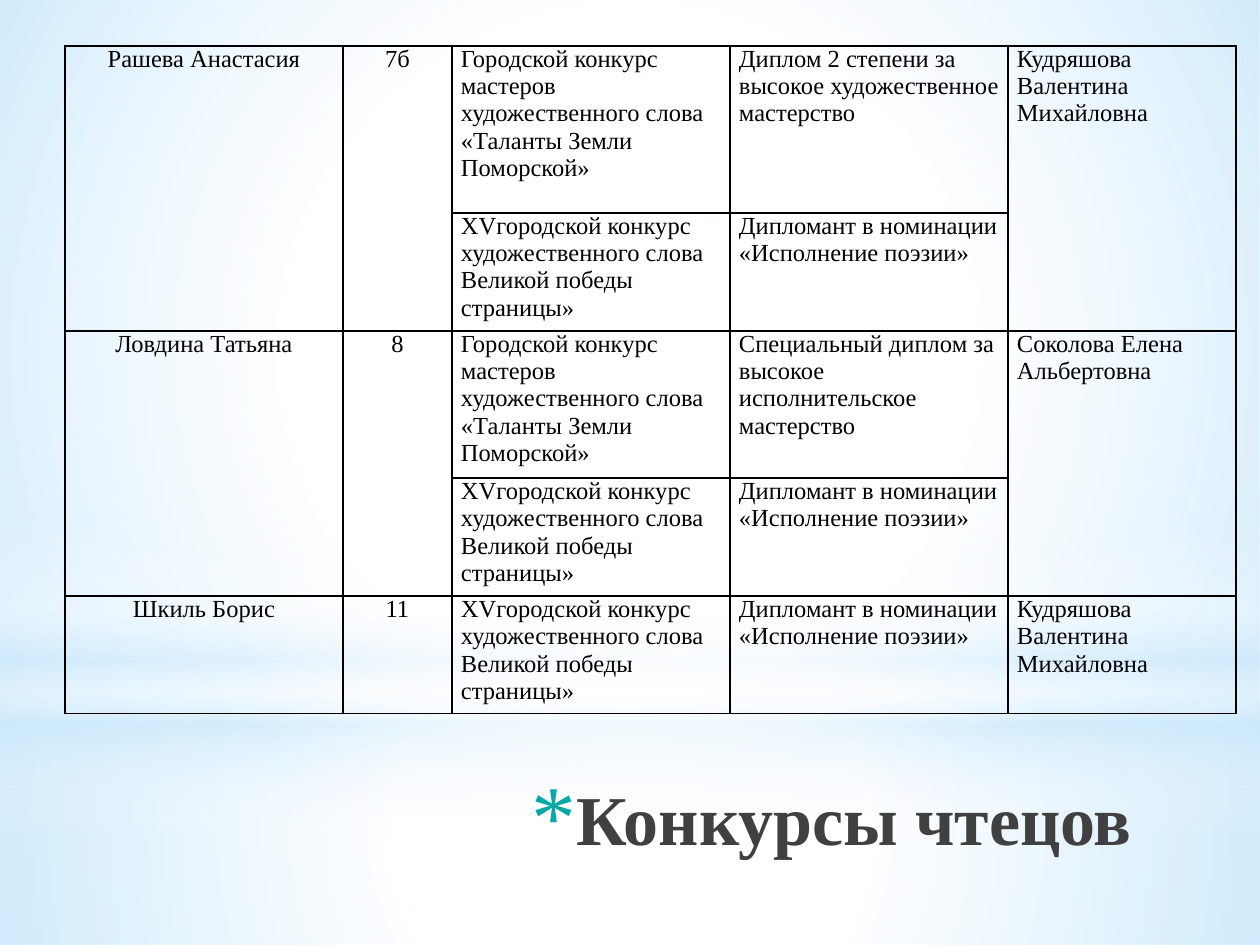
import pptx
import pptx.dml.color
import pptx.enum.shapes
import pptx.enum.text
import pptx.oxml
import pptx.oxml.ns
import pptx.util

PX = 914400 / 126
BLACK = pptx.dml.color.RGBColor(0x00, 0x00, 0x00)
WHITE = pptx.dml.color.RGBColor(0xFF, 0xFF, 0xFF)
SKY = pptx.dml.color.RGBColor(0xC6, 0xE7, 0xFC)
TEAL = pptx.dml.color.RGBColor(0x04, 0xA8, 0xA4)
DARK_GRAY = pptx.dml.color.RGBColor(0x40, 0x40, 0x40)
FONT = "Times New Roman"
NAMESPACE = pptx.oxml.ns.nsdecls("a")
CENTER = pptx.enum.text.PP_ALIGN.CENTER
LEFT = pptx.enum.text.PP_ALIGN.LEFT

RECTANGLE = pptx.enum.shapes.MSO_SHAPE.RECTANGLE
OVAL = pptx.enum.shapes.MSO_SHAPE.OVAL
RADIAL = ('<a:path path="circle"><a:fillToRect l="50000" t="50000" '
          'r="50000" b="50000"/></a:path>')
VERTICAL = '<a:lin ang="5400000" scaled="0"/>'
BACKDROP = [
    (RECTANGLE, (0, 703, 1260, 242), RADIAL,
     [(0, WHITE, 91), (37, WHITE, 76), (100, SKY, 79)]),
    (RECTANGLE, (0, 0, 1260, 703), RADIAL,
     [(0, WHITE, 89), (48, WHITE, 62), (100, SKY, 79)]),
    (RECTANGLE, (0, 519, 1260, 315), VERTICAL,
     [(0, WHITE, 0), (29, WHITE, 30), (45, SKY, 40),
      (55, WHITE, 26), (65, SKY, 60), (100, WHITE, 0)]),
    (OVAL, (0, 220, 1260, 703), RADIAL, [(0, WHITE, 100), (56, WHITE, 0)]),
]

COLUMN_WIDTHS = [278, 109, 278, 278, 228]
ROW_HEIGHTS = [167, 118, 147, 118, 117]
TALENTS = "Городской конкурс мастеров художественного слова «Таланты Земли Поморской»"
VICTORY = "XVгородской конкурс художественного слова Великой победы страницы»"
POETRY = "Дипломант в номинации «Исполнение поэзии»"
KUDRYASHOVA = "Кудряшова Валентина Михайловна"
READERS = [
    ("Рашева Анастасия", "7б", KUDRYASHOVA,
     [(TALENTS, "Диплом 2 степени за высокое художественное мастерство"),
      (VICTORY, POETRY)]),
    ("Ловдина Татьяна", "8", "Соколова Елена Альбертовна",
     [(TALENTS, "Специальный диплом за высокое исполнительское мастерство"),
      (VICTORY, POETRY)]),
    ("Шкиль Борис", "11", KUDRYASHOVA, [(VICTORY, POETRY)]),
]


def px(length):
    """Turn pixels into EMU."""
    return pptx.util.Emu(round(length * PX))


def format_paragraph(paragraph, size, color, alignment, bold=False):
    """Set the alignment and font of a paragraph's runs."""
    paragraph.alignment = alignment
    for run in paragraph.runs:
        run.font.name = FONT
        run.font.size = pptx.util.Pt(size)
        run.font.bold = bold
        run.font.color.rgb = color


def add_gradient_shape(slide, kind, box, direction, stops):
    """Add a borderless shape filled with a translucent gradient."""
    shape = slide.shapes.add_shape(kind, *map(px, box))
    shape.shadow.inherit = False
    shape.line.fill.background()
    shape.fill.background()
    stop_xml = "".join(
        f'<a:gs pos="{position * 1000}"><a:srgbClr val="{color}">'
        f'<a:alpha val="{opacity * 1000}"/></a:srgbClr></a:gs>'
        for position, color, opacity in stops)
    gradient = pptx.oxml.parse_xml(
        f'<a:gradFill {NAMESPACE} rotWithShape="1"><a:gsLst>{stop_xml}</a:gsLst>'
        f'{direction}</a:gradFill>')
    properties = shape.element.spPr
    properties.replace(properties.find(pptx.oxml.ns.qn("a:noFill")), gradient)


def add_title(slide, text):
    """Add the right-aligned heading with its asterisk bullet."""
    box = slide.shapes.add_textbox(px(247), px(760), px(897), px(138))
    frame = box.text_frame
    frame.word_wrap = True
    frame.margin_top = px(16)
    frame.text = text
    paragraph = frame.paragraphs[0]
    properties = paragraph._p.get_or_add_pPr()
    properties.set("marL", str(px(44)))
    properties.set("indent", str(px(-44)))
    for bullet in (f'<a:buClr {NAMESPACE}><a:srgbClr val="{TEAL}"/></a:buClr>',
                   f'<a:buSzPct {NAMESPACE} val="128000"/>',
                   f'<a:buFont {NAMESPACE} typeface="{FONT}"/>',
                   f'<a:buChar {NAMESPACE} char="*"/>'):
        properties.append(pptx.oxml.parse_xml(bullet))
    format_paragraph(paragraph, 40, DARK_GRAY,
                     pptx.enum.text.PP_ALIGN.RIGHT, bold=True)


def style_cell(cell):
    """Give a cell thin black borders, no fill and tight margins."""
    properties = cell._tc.get_or_add_tcPr()
    for side in ("lnL", "lnR", "lnT", "lnB"):
        properties.append(pptx.oxml.parse_xml(
            f'<a:{side} {NAMESPACE} w="12700"><a:solidFill>'
            f'<a:srgbClr val="{BLACK}"/></a:solidFill></a:{side}>'))
    cell.fill.background()
    cell.margin_left = cell.margin_right = px(9)
    cell.margin_top = cell.margin_bottom = 0


def fill_cell(cell, text, alignment=LEFT):
    """Write one formatted text into a cell."""
    cell.text_frame.text = text
    format_paragraph(cell.text_frame.paragraphs[0], 14, BLACK, alignment)


def add_readers_table(slide):
    """Add the table of readers, their contests and teachers."""
    frame = slide.shapes.add_table(
        len(ROW_HEIGHTS), len(COLUMN_WIDTHS), px(65), px(46),
        px(sum(COLUMN_WIDTHS)), px(sum(ROW_HEIGHTS)))
    table = frame.table
    table.first_row = table.horz_banding = False
    for column, width in zip(table.columns, COLUMN_WIDTHS):
        column.width = px(width)
    for row, height in zip(table.rows, ROW_HEIGHTS):
        row.height = px(height)
    for cell in table.iter_cells():
        style_cell(cell)
    top = 0
    for name, grade, teacher, results in READERS:
        bottom = top + len(results) - 1
        for column, text, alignment in ((0, name, CENTER), (1, grade, CENTER),
                                        (4, teacher, LEFT)):
            cell = table.cell(top, column)
            if bottom > top:
                cell.merge(table.cell(bottom, column))
            fill_cell(cell, text, alignment)
        for row, (contest, award) in enumerate(results, top):
            fill_cell(table.cell(row, 2), contest)
            fill_cell(table.cell(row, 3), award)
        top = bottom + 1


def main():
    """Build and save the slide."""
    presentation = pptx.Presentation()
    presentation.slide_width = px(1260)
    presentation.slide_height = px(945)
    slide = presentation.slides.add_slide(presentation.slide_layouts[6])
    for kind, box, direction, stops in BACKDROP:
        add_gradient_shape(slide, kind, box, direction, stops)
    add_title(slide, "Конкурсы чтецов")
    add_readers_table(slide)
    presentation.save("out.pptx")


if __name__ == "__main__":
    main()
